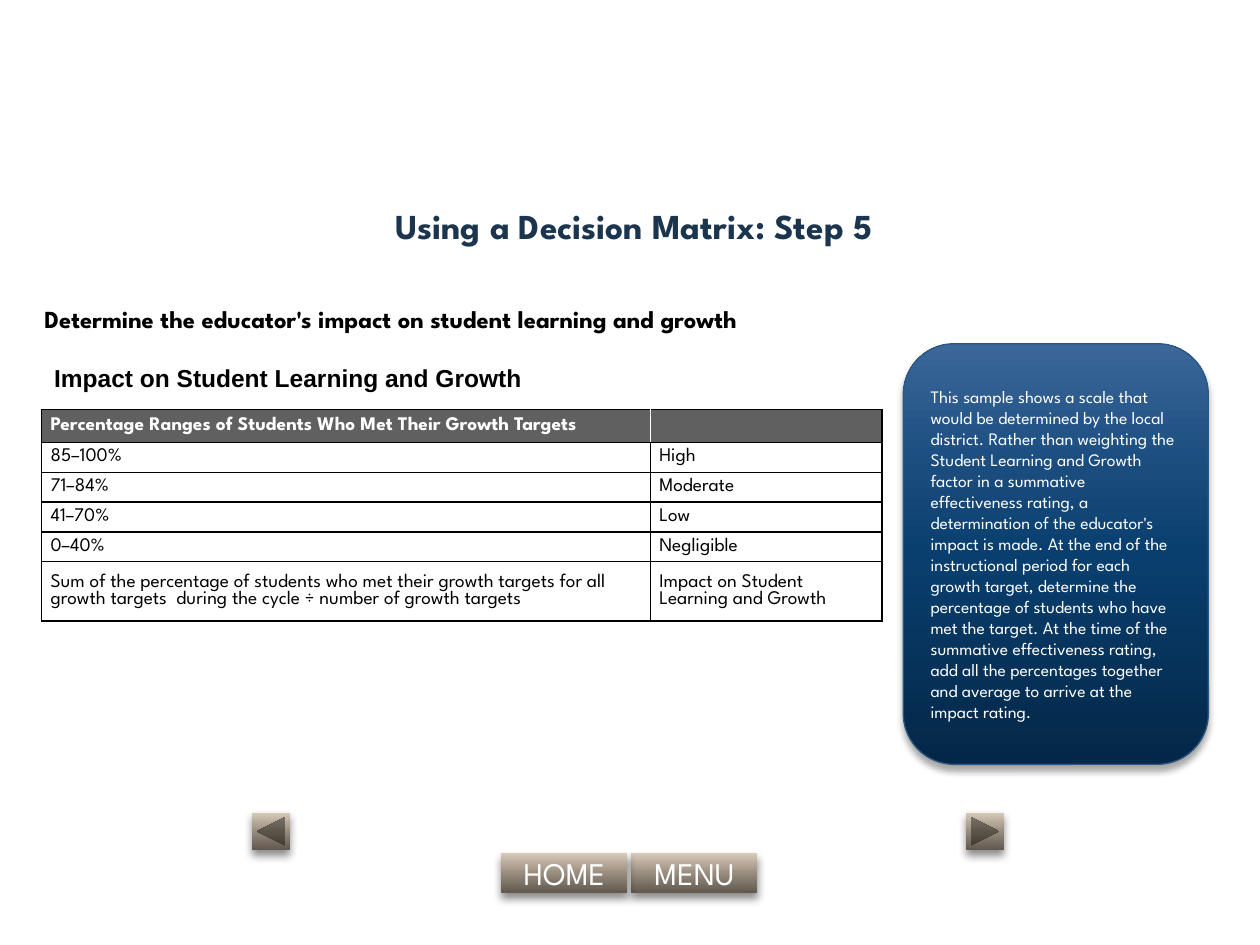
from dataclasses import dataclass

from lxml.etree import SubElement
from pptx import Presentation
from pptx.dml.color import RGBColor
from pptx.enum.shapes import MSO_SHAPE
from pptx.enum.text import MSO_ANCHOR, PP_ALIGN
from pptx.oxml.ns import qn
from pptx.util import Cm, Pt


@dataclass(frozen=True)
class Theme:
    font: str = "League Spartan"
    plain: str = "Arial"
    navy: str = "1A354D"
    black: str = "000000"
    white: str = "FFFFFF"
    head: str = "606060"
    edge: str = "2B5880"
    stone: tuple = ("5F574E", "988C7E", "B2A596", "D8CAB8")
    blue: tuple = ("042747", "093F6F", "1A4C7E", "3B679A")
    stops: tuple = (0, 50, 70, 100)
    title: int = 20
    button: int = 18
    lead: int = 14
    cell: int = 11
    note: int = 10


THEME = Theme()
ROWS = [
    ("Percentage Ranges of Students Who Met Their Growth Targets", ""),
    ("85–100%", "High"),
    ("71–84%", "Moderate"),
    ("41–70%", "Low"),
    ("0–40%", "Negligible"),
    ("Sum of the percentage of students who met their growth targets for all "
     "growth targets  during the cycle ÷ number of growth targets",
     "Impact on Student Learning and Growth"),
]
NOTE = (
    "This sample shows a scale that would be determined by the local district. "
    "Rather than weighting the Student Learning and Growth factor in a summative "
    "effectiveness rating, a determination of the educator's impact is made. "
    "At the end of the instructional period for each growth target, determine "
    "the percentage of students who have met the target. At the time of the "
    "summative effectiveness rating, add all the percentages together and "
    "average to arrive at the impact rating."
)


def place(shape, box):
    shape.left, shape.top, shape.width, shape.height = (Cm(v) for v in box)


def write(para, text, size, color, bold=False, font=THEME.font):
    run = para.add_run()
    run.text = text
    run.font.name = font
    run.font.size = Pt(size)
    run.font.bold = bold
    run.font.color.rgb = RGBColor.from_string(color)


def shade(shape, colors, blur, alpha):
    """Upward gradient with a soft shadow below."""
    shape.fill.gradient()
    shape.fill.gradient_angle = 90
    props = shape._element.spPr
    stops = props.find(".//" + qn("a:gsLst"))
    for stop in list(stops):
        stops.remove(stop)
    for pos, color in zip(THEME.stops, colors):
        stop = SubElement(stops, qn("a:gs"), pos=str(pos * 1000))
        SubElement(stop, qn("a:srgbClr"), val=color)
    shape.shadow.inherit = False
    cast = SubElement(props.find(qn("a:effectLst")), qn("a:outerShdw"),
                      blurRad=str(Pt(blur)), dist=str(Pt(3)),
                      dir="5400000", rotWithShape="0")
    tint = SubElement(cast, qn("a:srgbClr"), val=THEME.black)
    SubElement(tint, qn("a:alpha"), val=str(alpha * 1000))


def add_title(slide, box):
    shape = slide.shapes.title
    place(shape, box)
    frame = shape.text_frame
    frame.vertical_anchor = MSO_ANCHOR.MIDDLE
    para = frame.paragraphs[0]
    para.alignment = PP_ALIGN.CENTER
    write(para, "Using a Decision Matrix: Step 5", THEME.title, THEME.navy, True)


def add_lead(slide, box):
    shape = slide.placeholders[1]
    place(shape, box)
    frame = shape.text_frame
    frame.margin_top = Cm(0.2)
    para = frame.paragraphs[0]
    props = para._p.get_or_add_pPr()
    props.set("marL", "0")
    props.set("indent", "0")
    SubElement(props, qn("a:buNone"))
    para.space_before = Pt(0)
    write(para, "Determine the educator's impact on student learning and growth",
          THEME.lead, THEME.black, True)


def add_label(slide, box):
    frame = slide.shapes.add_textbox(*(Cm(v) for v in box)).text_frame
    frame.word_wrap = True
    write(frame.paragraphs[0], "Impact on Student Learning and Growth",
          THEME.lead, THEME.black, True, THEME.plain)


def frame_cell(cell, colors):
    """Borders go before the fill in the cell properties."""
    props = cell._tc.get_or_add_tcPr()
    for i, (side, color) in enumerate(zip("LRTB", colors)):
        line = props.makeelement(qn("a:ln" + side), {"w": str(Pt(1))})
        props.insert(i, line)
        fill = SubElement(line, qn("a:solidFill"))
        SubElement(fill, qn("a:srgbClr"), val=color)


def add_scale(slide, box):
    table = slide.shapes.add_table(len(ROWS), 2, *(Cm(v) for v in box)).table
    table.first_row = table.horz_banding = False
    for col, width in zip(table.columns, (12.27, box[2] - 12.27)):
        col.width = Cm(width)
    for row, height in zip(table.rows, [0.66] + [0.6] * 4 + [1.2]):
        row.height = Cm(height)
    for r, texts in enumerate(ROWS):
        head = r == 0
        for c, text in enumerate(texts):
            cell = table.cell(r, c)
            cell.vertical_anchor = MSO_ANCHOR.MIDDLE
            cell.margin_left = cell.margin_right = Cm(0.18)
            cell.margin_top = cell.margin_bottom = 0
            if head:
                cell.fill.solid()
                cell.fill.fore_color.rgb = RGBColor.from_string(THEME.head)
            else:
                cell.fill.background()
            sides = [THEME.black] * 4
            if head:
                sides[1 - c] = THEME.white
            frame_cell(cell, sides)
            para = cell.text_frame.paragraphs[0]
            para.space_after = Pt(2)
            if text:
                write(para, text, THEME.cell,
                      THEME.white if head else THEME.black, head)
            else:
                para.font.size = Pt(THEME.cell)


def add_note(slide, box):
    shape = slide.shapes.add_shape(MSO_SHAPE.ROUNDED_RECTANGLE,
                                   *(Cm(v) for v in box))
    shape.line.color.rgb = RGBColor.from_string(THEME.edge)
    shape.line.width = Pt(0.75)
    shade(shape, THEME.blue, 4, 35)
    frame = shape.text_frame
    frame.word_wrap = True
    frame.vertical_anchor = MSO_ANCHOR.MIDDLE
    para = frame.paragraphs[0]
    para.alignment = PP_ALIGN.LEFT
    para.line_spacing = Pt(12)
    write(para, NOTE, THEME.note, THEME.white)


def add_nav(slide, box):
    left, top, width, height = box
    side, wide, tall = 0.76, 2.54, 0.81
    low = height - tall
    kinds = MSO_SHAPE
    parts = [
        (kinds.ACTION_BUTTON_FORWARD_OR_NEXT, width - side, 0, side, side, ""),
        (kinds.ACTION_BUTTON_BACK_OR_PREVIOUS, 0, 0, side, side, ""),
        (kinds.ACTION_BUTTON_CUSTOM, 7.65, low, wide, tall, "MENU"),
        (kinds.ACTION_BUTTON_CUSTOM, 5.03, low, wide, tall, "HOME"),
    ]
    for kind, x, y, w, h, text in parts:
        shape = slide.shapes.add_shape(kind, Cm(left + x), Cm(top + y), Cm(w), Cm(h))
        shape.line.fill.background()
        shade(shape, THEME.stone, 5, 45)
        if text:
            frame = shape.text_frame
            frame.vertical_anchor = MSO_ANCHOR.MIDDLE
            para = frame.paragraphs[0]
            para.alignment = PP_ALIGN.CENTER
            write(para, text, THEME.button, THEME.white)


def main():
    deck = Presentation()
    deck.slide_width, deck.slide_height = Cm(25.4), Cm(19.05)
    slide = deck.slides.add_slide(deck.slide_layouts[1])
    # Navigation buttons
    add_nav(slide, (5.08, 16.38, 15.16, 1.63))
    # Heading and lead line
    add_title(slide, (0.08, 3.38, 25.4, 2.34))
    add_lead(slide, (0.64, 5.92, 23.93, 10.16))
    # Rating scale with its label
    add_scale(slide, (0.84, 8.26, 16.94, 4.26))
    add_label(slide, (0.84, 7.19, 10.36, 1.63))
    # Explanation
    add_note(slide, (18.21, 6.93, 6.15, 8.48))
    deck.save("out.pptx")


if __name__ == "__main__":
    main()
